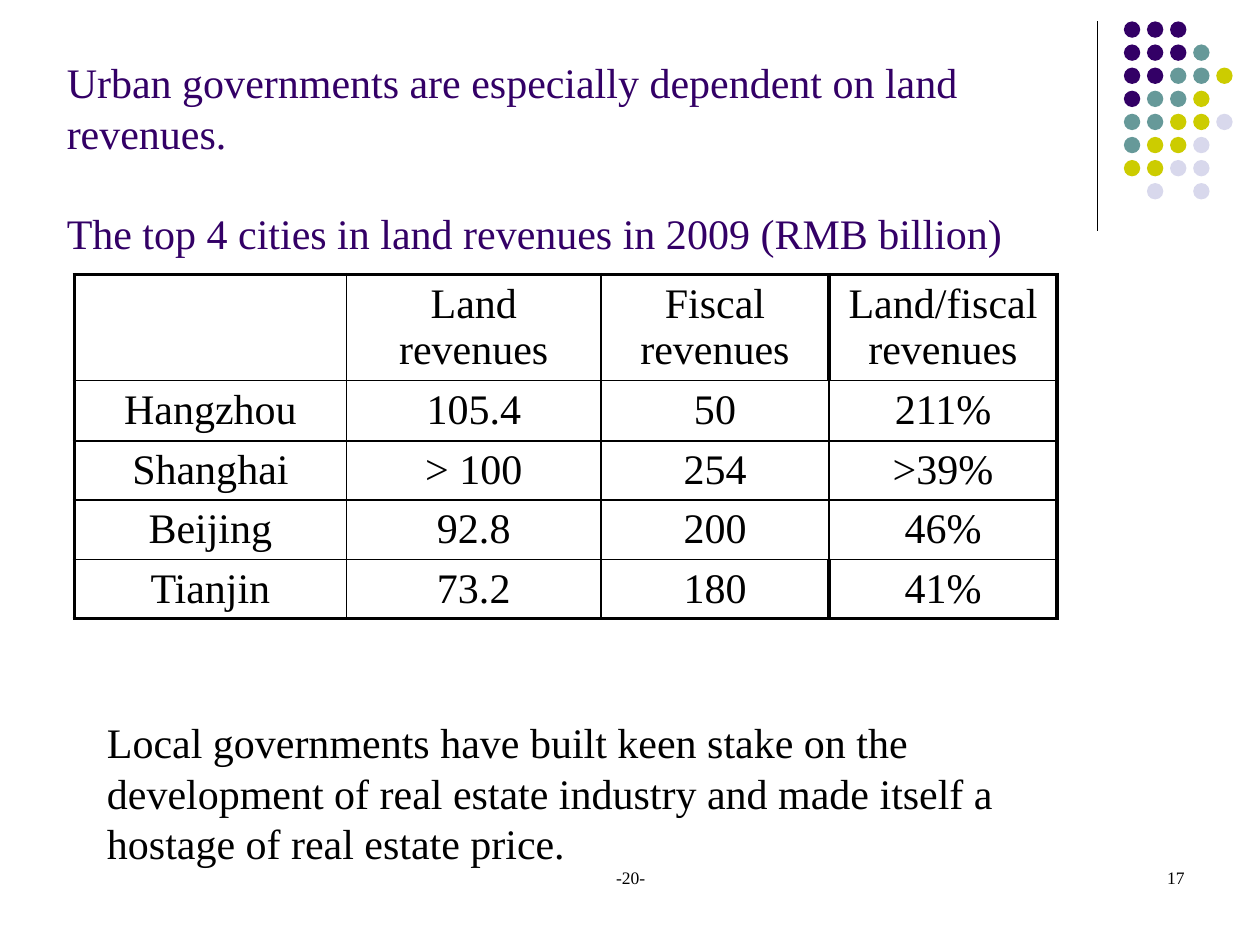
from dataclasses import dataclass

from lxml import etree
from pptx import Presentation
from pptx.dml.color import RGBColor
from pptx.enum.shapes import MSO_CONNECTOR, MSO_SHAPE
from pptx.enum.text import MSO_ANCHOR, MSO_AUTO_SIZE, PP_ALIGN
from pptx.oxml.ns import qn
from pptx.util import Inches, Pt

LEFT, CENTER, RIGHT = PP_ALIGN.LEFT, PP_ALIGN.CENTER, PP_ALIGN.RIGHT
TOP, BOTTOM = MSO_ANCHOR.TOP, MSO_ANCHOR.BOTTOM
NO_AUTOFIT = MSO_AUTO_SIZE.NONE
OVAL = MSO_SHAPE.OVAL
STRAIGHT = MSO_CONNECTOR.STRAIGHT

FONT = "Times New Roman"
BLACK = "000000"
PURPLE = "330066"
TEXT_LEADING = 28.8
THIN, THICK = 1, 2.25

DOT_COLORS = {"P": PURPLE, "T": "669999", "Y": "CCCC00", "L": "D8D8EC"}
DOT_ROWS = ["PPP", "PPPT", "PPTTY", "PTTY", "TTYYL", "TYYL", "YYLL", " L L"]
DOT_LEFT, DOT_TOP, DOT_SIZE = 8.92, 0.17, 0.13
DOT_PITCH = 0.55 / 3

TITLE_LINES = [
    "Urban governments are especially dependent on land revenues.",
    "",
    "The top 4 cities in land revenues in 2009 (RMB billion)",
]
REVENUES = [
    ["", "Land revenues", "Fiscal revenues", "Land/fiscal revenues"],
    ["Hangzhou", "105.4", "50", "211%"],
    ["Shanghai", "> 100", "254", ">39%"],
    ["Beijing", "92.8", "200", "46%"],
    ["Tianjin", "73.2", "180", "41%"],
]
COLUMN_WIDTHS = [2.16, 2.02, 1.81, 1.81]
ROW_HEIGHTS = [0.84, 0.48, 0.47, 0.47, 0.47]


@dataclass(frozen=True)
class TextBlock:
    text: str
    left: float
    top: float
    width: float
    height: float
    size: float
    align: PP_ALIGN = LEFT
    leading: float | None = None


TEXT_BLOCKS = [
    TextBlock("-20-", 3.42, 6.83, 3.17, 0.5, 10, CENTER),
    TextBlock("17", 7.17, 6.83, 2.33, 0.5, 10, RIGHT),
    TextBlock(
        "Local governments have built keen stake on the development of real "
        "estate industry and made itself a hostage of real estate price.",
        0.75, 5.64, 8.19, 1.3, 24, LEFT, TEXT_LEADING,
    ),
]


def rgb(color: str) -> RGBColor:
    return RGBColor.from_string(color)


def add_run(paragraph, text: str, size: float, color: str = BLACK) -> None:
    run = paragraph.add_run()
    run.text = text
    run.font.name = FONT
    run.font.size = Pt(size)
    run.font.color.rgb = rgb(color)


def write_title(slide) -> None:
    title = slide.shapes.title
    title.left, title.top = Inches(0.43), Inches(0.68)
    title.width, title.height = Inches(8.25), Inches(1.42)
    frame = title.text_frame
    frame.word_wrap = True
    frame.auto_size = NO_AUTOFIT
    frame.vertical_anchor = BOTTOM
    paragraph = frame.paragraphs[0]
    paragraph.alignment = LEFT
    paragraph.line_spacing = Pt(TEXT_LEADING)
    paragraph.space_before = Pt(0)
    for index, line in enumerate(TITLE_LINES):
        if index:
            paragraph.add_line_break()
        if line:
            add_run(paragraph, line, 24, PURPLE)


def add_text_block(slide, block: TextBlock) -> None:
    shape = slide.shapes.add_textbox(
        Inches(block.left), Inches(block.top), Inches(block.width), Inches(block.height)
    )
    frame = shape.text_frame
    frame.word_wrap = True
    frame.vertical_anchor = TOP
    paragraph = frame.paragraphs[0]
    paragraph.alignment = block.align
    if block.leading:
        paragraph.line_spacing = Pt(block.leading)
    add_run(paragraph, block.text, block.size)


def add_divider(slide) -> None:
    line = slide.shapes.add_connector(
        STRAIGHT, Inches(8.71), Inches(0.17), Inches(8.71), Inches(1.83)
    )
    line.line.color.rgb = rgb(BLACK)
    line.line.width = Pt(0.75)
    properties = line._element.find(qn("p:spPr"))
    etree.SubElement(properties, qn("a:effectLst"))


def add_dots(slide) -> None:
    group = slide.shapes.add_group_shape()
    for row, keys in enumerate(DOT_ROWS):
        for column, key in enumerate(keys):
            if key == " ":
                continue
            dot = group.shapes.add_shape(
                OVAL,
                Inches(DOT_LEFT + column * DOT_PITCH),
                Inches(DOT_TOP + row * DOT_PITCH),
                Inches(DOT_SIZE),
                Inches(DOT_SIZE),
            )
            dot.shadow.inherit = False
            dot.fill.solid()
            dot.fill.fore_color.rgb = rgb(DOT_COLORS[key])
            dot.line.fill.background()


def set_borders(cell, widths: dict[str, float]) -> None:
    properties = cell._tc.get_or_add_tcPr()
    for index, (side, width) in enumerate(widths.items()):
        border = etree.Element(qn(f"a:{side}"), w=str(Pt(width)))
        fill = etree.SubElement(border, qn("a:solidFill"))
        etree.SubElement(fill, qn("a:srgbClr"), val=BLACK)
        properties.insert(index, border)


def border_widths(row: int, column: int) -> dict[str, float]:
    last_row, last_column = len(REVENUES) - 1, len(COLUMN_WIDTHS) - 1
    outer_row = row in (0, last_row)

    def vertical(edge: int) -> float:
        is_outer = edge in (0, last_column + 1)
        return THICK if is_outer or (outer_row and edge == last_column) else THIN

    return {
        "lnL": vertical(column),
        "lnR": vertical(column + 1),
        "lnT": THICK if row == 0 else THIN,
        "lnB": THICK if row == last_row else THIN,
    }


def add_revenue_table(slide) -> None:
    table = slide.shapes.add_table(
        len(REVENUES), len(COLUMN_WIDTHS), Inches(0.59), Inches(2.18),
        Inches(sum(COLUMN_WIDTHS)), Inches(sum(ROW_HEIGHTS)),
    ).table
    table.first_row = False
    table.horz_banding = False
    for column, width in zip(table.columns, COLUMN_WIDTHS):
        column.width = Inches(width)
    for row, height in zip(table.rows, ROW_HEIGHTS):
        row.height = Inches(height)
    for row_index, values in enumerate(REVENUES):
        for column_index, value in enumerate(values):
            cell = table.cell(row_index, column_index)
            cell.fill.background()
            set_borders(cell, border_widths(row_index, column_index))
            if value:
                paragraph = cell.text_frame.paragraphs[0]
                paragraph.alignment = CENTER
                add_run(paragraph, value, 24)


def main() -> None:
    presentation = Presentation()
    presentation.slide_width, presentation.slide_height = Inches(10), Inches(7.5)
    slide = presentation.slides.add_slide(presentation.slide_layouts[5])
    add_divider(slide)
    add_dots(slide)
    write_title(slide)
    add_revenue_table(slide)
    for block in TEXT_BLOCKS:
        add_text_block(slide, block)
    presentation.save("out.pptx")


if __name__ == "__main__":
    main()
